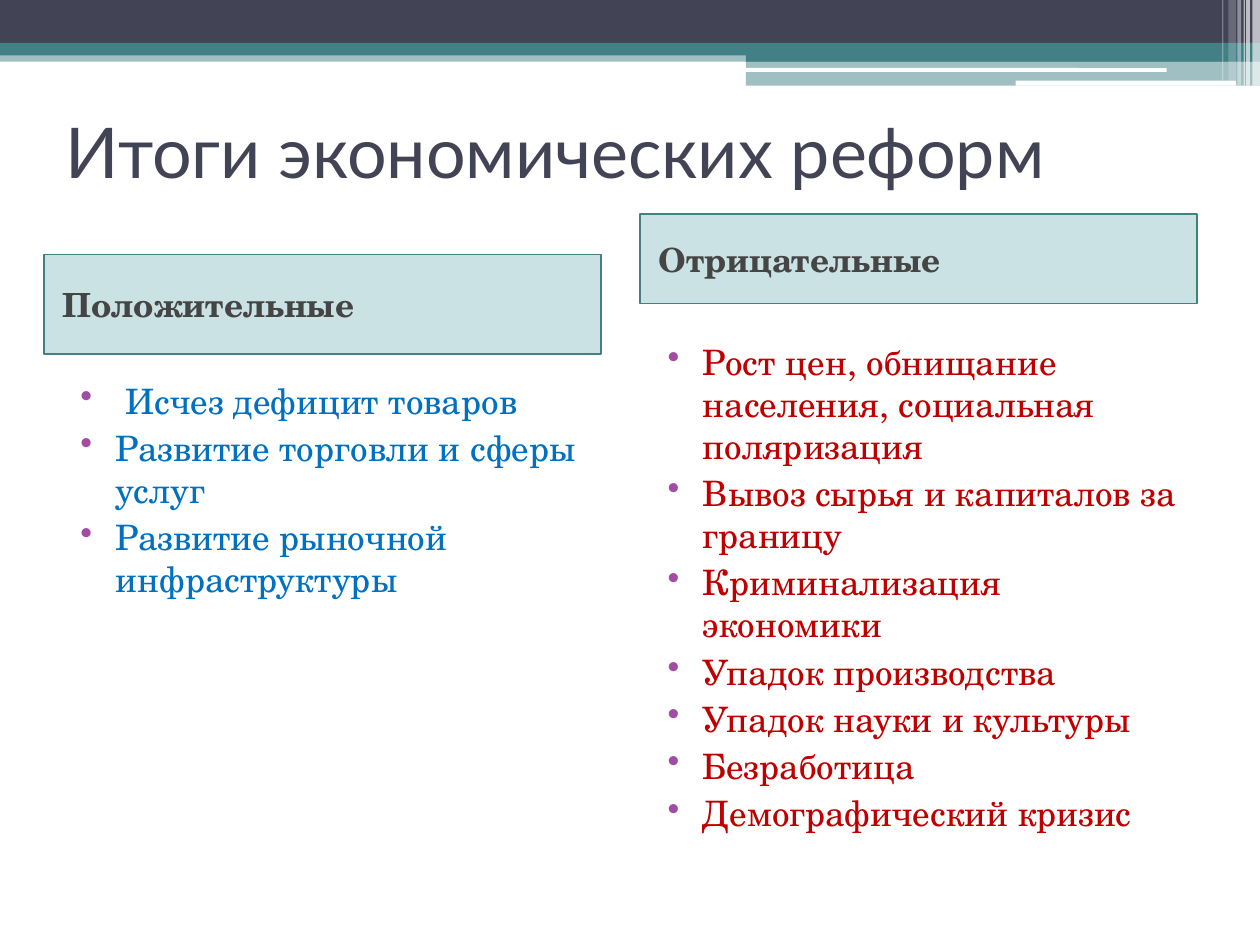
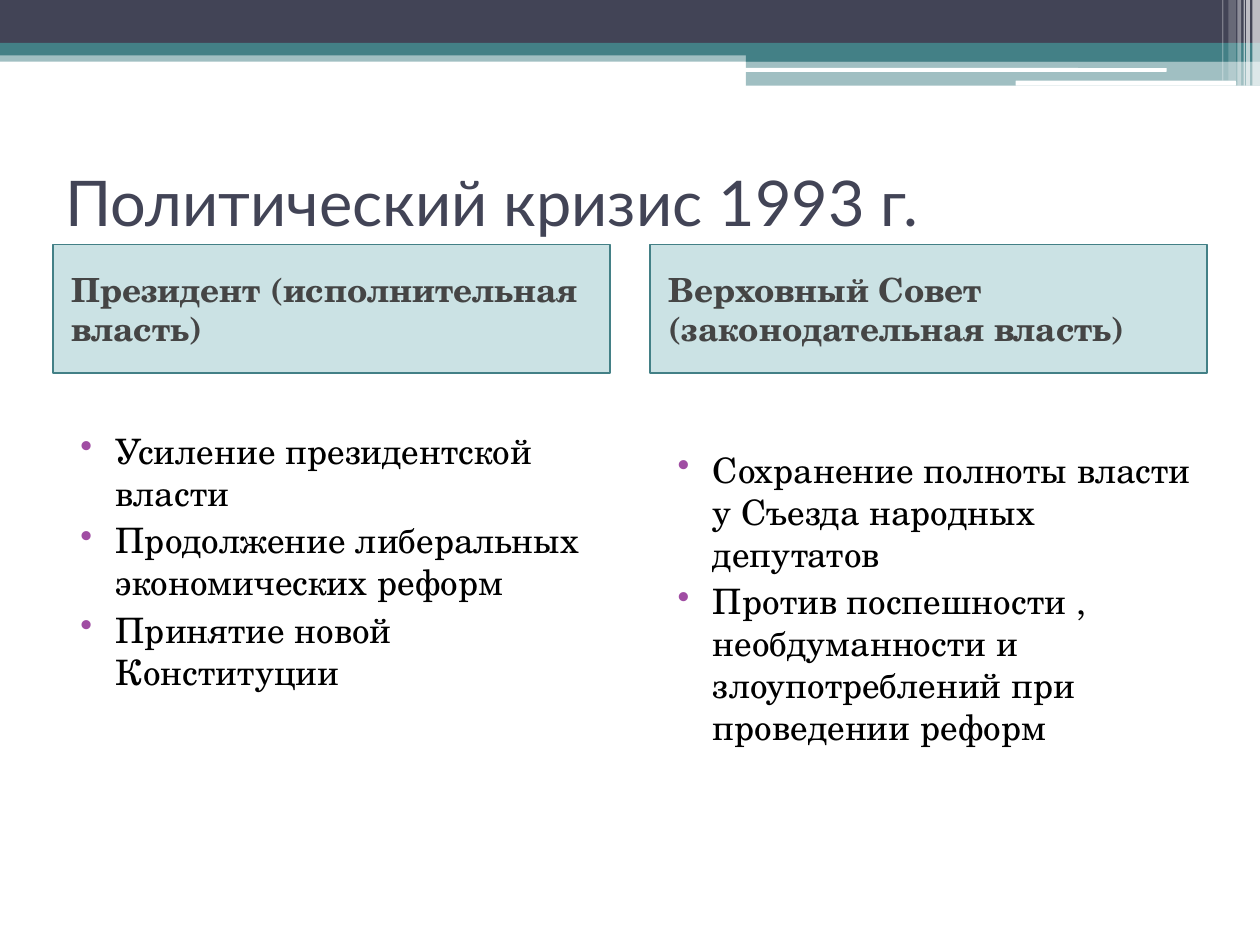
from collections import namedtuple

from lxml import etree
from pptx import Presentation
from pptx.dml.color import RGBColor
from pptx.enum.shapes import MSO_SHAPE
from pptx.enum.text import MSO_ANCHOR, MSO_AUTO_SIZE, PP_ALIGN
from pptx.oxml.ns import qn
from pptx.util import Inches, Pt

RECTANGLE, ROUNDED = MSO_SHAPE.RECTANGLE, MSO_SHAPE.ROUNDED_RECTANGLE
TOP, MIDDLE, LEFT = MSO_ANCHOR.TOP, MSO_ANCHOR.MIDDLE, PP_ALIGN.LEFT
NO_AUTOFIT = MSO_AUTO_SIZE.NONE
TITLE_ONLY = 5

SLIDE_WIDTH, SLIDE_HEIGHT = Inches(10), Inches(7.5)
COLUMNS, ROWS = 100, 75  # all boxes are measured in these grid cells
COLUMN_WIDTH = 44.2

TITLE_FONT, BODY_FONT = "Lato", "TeX Gyre Schola"
NAVY, TEAL, WHITE, BLACK = "424456", "438086", "FFFFFF", "000000"
HEADING_FILL, HEADING_TEXT, BULLET = "328E97", "454545", "A04DA3"
BLUE, RED = "0070C0", "C00000"

Box = namedtuple("Box", "left top width height")
Column = namedtuple("Column", "heading heading_box items body_box color")


def rgb(color):
    return RGBColor.from_string(color)


def place(box):
    """Turn a box in grid cells into left, top, width and height in EMU."""
    across, down = SLIDE_WIDTH / COLUMNS, SLIDE_HEIGHT / ROWS
    return (round(box.left * across), round(box.top * down),
            round(box.width * across), round(box.height * down))


def add_block(slide, box, fill, opacity=100, kind=RECTANGLE, line=None):
    shape = slide.shapes.add_shape(kind, *place(box))
    shape.shadow.inherit = False
    shape.fill.solid()
    shape.fill.fore_color.rgb = rgb(fill)
    if opacity < 100:
        color = shape.element.spPr.find(qn("a:solidFill"))[0]
        etree.SubElement(color, qn("a:alpha"), val=str(opacity * 1000))
    if line:
        shape.line.color.rgb = rgb(line)
        shape.line.width = Pt(1)
    else:
        shape.line.fill.background()
    return shape


def write(shape, *lines, size, font, color, bold=False, anchor=MIDDLE,
          before=0, margin=0, hanging=0, bullet=None):
    """Write one paragraph per line; margin and hanging are in inches."""
    frame = shape.text_frame
    frame.word_wrap = True
    frame.auto_size = NO_AUTOFIT
    frame.vertical_anchor = anchor
    for index, line in enumerate(lines):
        paragraph = frame.add_paragraph() if index else frame.paragraphs[0]
        paragraph.alignment = LEFT
        paragraph.space_before = Pt(before)
        properties = paragraph._p.get_or_add_pPr()
        properties.set("marL", str(Inches(margin)))
        properties.set("indent", str(-Inches(hanging)))
        if bullet:
            bullet_color = etree.SubElement(properties, qn("a:buClr"))
            etree.SubElement(bullet_color, qn("a:srgbClr"), val=bullet)
            etree.SubElement(properties, qn("a:buChar"), char="•")
        run = paragraph.add_run()
        run.text = line
        run.font.size = Pt(size)
        run.font.name = font
        run.font.bold = bold
        run.font.color.rgb = rgb(color)


def add_bands(slide):
    """Draw the top bands and move them to the layout that all slides share."""
    right, right_width = 59.2, COLUMNS - 59.2
    bands = [
        add_block(slide, Box(0, 4, COLUMNS, 0.9), TEAL, 50),
        add_block(slide, Box(0, 0, COLUMNS, 3.4), NAVY),
        add_block(slide, Box(0, 3.4, COLUMNS, 1), TEAL),
        add_block(slide, Box(right, 3.9, right_width, 1), TEAL),
        add_block(slide, Box(right, 4.8, right_width, 2), TEAL, 50),
        add_block(slide, Box(59.1, 5.4, 33.5, 0.3), WHITE, kind=ROUNDED),
        add_block(slide, Box(80.6, 6.4, 17.5, 0.4), WHITE, kind=ROUNDED),
    ]
    stripes = [(99.4, 0.6, 6.8, 65), (98.9, 0.3, 6.8, 65), (98.7, 0.1, 6.8, 60),
               (98.2, 0.3, 6.8, 40), (97.5, 0.6, 6.4, 20), (97, 0.1, 6.4, 30)]
    bands += [add_block(slide, Box(left, 0, width, height), WHITE, opacity)
              for left, width, height, opacity in stripes]
    for band in bands:
        slide.slide_layout.shapes.element.append(band.element)


def add_title(slide, text, box, size):
    title = slide.shapes.title
    title.left, title.top, title.width, title.height = place(box)
    write(title, text, size=size, font=TITLE_FONT, color=NAVY)


def add_column(slide, column):
    heading = add_block(slide, column.heading_box, HEADING_FILL, 25, line=TEAL)
    write(heading, column.heading, size=19, font=BODY_FONT, color=HEADING_TEXT,
          bold=True, before=3, margin=0.05)
    body = slide.shapes.add_textbox(*place(column.body_box))
    write(body, *column.items, size=20, font=BODY_FONT, color=column.color,
          anchor=TOP, before=3, margin=0.4, hanging=0.28, bullet=BULLET)


def add_comparison(presentation, title, title_box, title_size, columns):
    slide = presentation.slides.add_slide(presentation.slide_layouts[TITLE_ONLY])
    add_title(slide, title, title_box, title_size)
    for column in columns:
        add_column(slide, column)
    return slide


def main():
    presentation = Presentation()
    presentation.slide_width, presentation.slide_height = SLIDE_WIDTH, SLIDE_HEIGHT

    results = add_comparison(
        presentation, "Итоги экономических реформ", Box(4.2, 7.6, 91.7, 8.7), 40,
        [Column("Положительные", Box(3.5, 20.2, COLUMN_WIDTH, 7.9),
                [" Исчез дефицит товаров",
                 "Развитие торговли и сферы услуг",
                 "Развитие рыночной инфраструктуры"],
                Box(4.2, 29.6, COLUMN_WIDTH, 42.5), BLUE),
         Column("Отрицательные", Box(50.8, 17, COLUMN_WIDTH, 7.1),
                ["Рост цен, обнищание населения, социальная поляризация",
                 "Вывоз сырья и капиталов за границу",
                 "Криминализация экономики",
                 "Упадок производства",
                 "Упадок науки и культуры",
                 "Безработица",
                 "Демографический кризис"],
                Box(50.8, 26.5, COLUMN_WIDTH, 40.5), RED)])
    add_bands(results)

    add_comparison(
        presentation, "Политический кризис 1993 г.", Box(4.2, 12.5, 91.7, 6.9), 36,
        [Column("Президент (исполнительная власть)",
                Box(4.2, 19.4, COLUMN_WIDTH, 10.2),
                ["Усиление президентской власти",
                 "Продолжение либеральных экономических реформ",
                 "Принятие новой Конституции"],
                Box(4.2, 33.6, COLUMN_WIDTH, 38.6), BLACK),
         Column("Верховный Совет (законодательная власть)",
                Box(51.6, 19.4, COLUMN_WIDTH, 10.2),
                ["Сохранение полноты власти у Съезда народных депутатов",
                 "Против поспешности , необдуманности и злоупотреблений "
                 "при проведении реформ"],
                Box(51.6, 35.1, COLUMN_WIDTH, 37), BLACK)])

    presentation.save("out.pptx")


if __name__ == "__main__":
    main()
